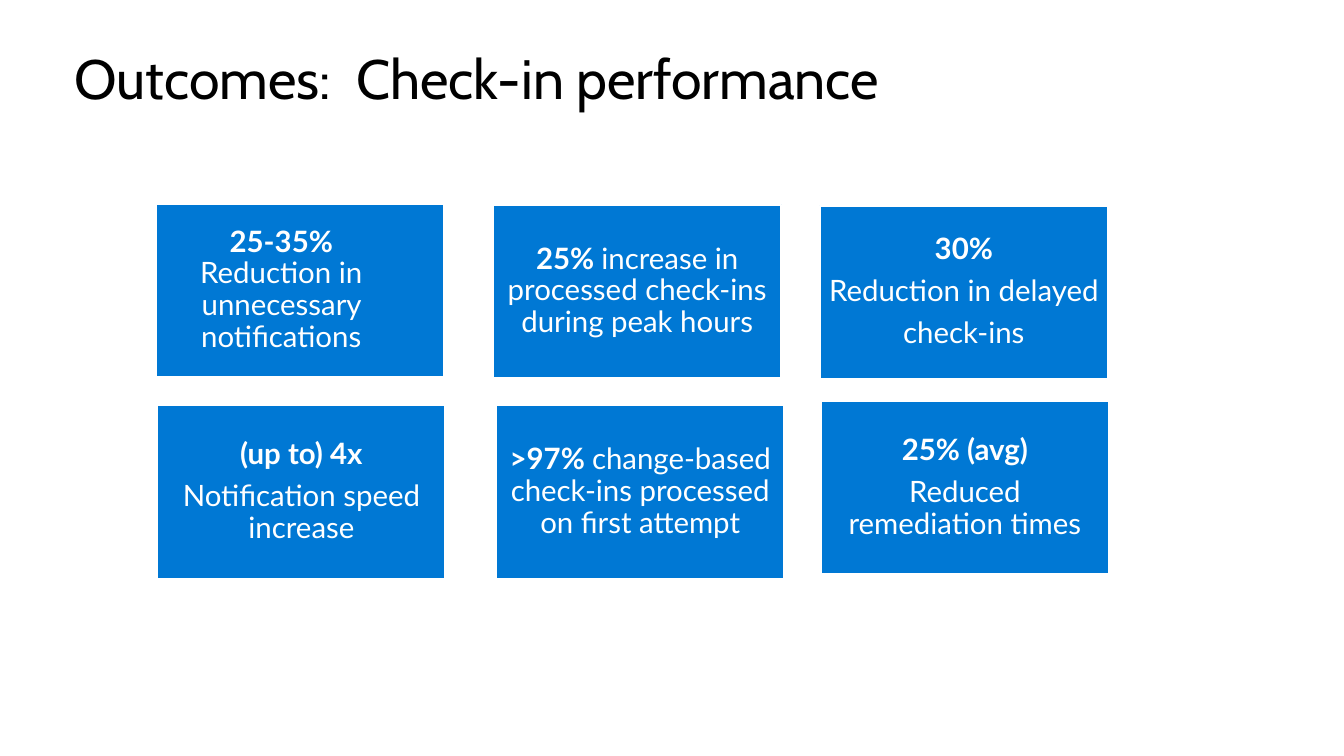
"""Build the check-in performance outcomes slide."""
from pptx import Presentation, util as u
from pptx.dml.color import RGBColor
from pptx.enum import shapes, text

HUES = {"tile": "0078D4", "light": "FFFFFF", "dark": "000000"}
WIDE, HIGH = 2.86, 1.72
PAD = u.Inches(0.08)


def write(para, words, size=21, font="Lato", hue="light", bold=False,
          align=text.PP_ALIGN.CENTER, after=7.35):
    para.alignment = align
    para.line_spacing = 0.9
    para.space_after = u.Pt(after)
    run = para.add_run()
    run.text = words
    run.font.size = u.Pt(size)
    run.font.name = font
    run.font.bold = bold
    run.font.color.rgb = RGBColor.from_string(HUES[hue])


deck = Presentation()
deck.slide_width, deck.slide_height = u.Inches(13.33), u.Inches(7.5)
slide = deck.slides.add_slide(deck.slide_layouts[5])

title = slide.shapes.title
title.left, title.top = u.Inches(0.64), u.Inches(0.5)
title.width, title.height = u.Inches(10.98), u.Inches(0.61)
frame = title.text_frame
frame.auto_size = text.MSO_AUTO_SIZE.NONE
frame.vertical_anchor = text.MSO_ANCHOR.MIDDLE
write(frame.paragraphs[0], "Outcomes:  Check-in performance", size=39.6,
      font="Cabin", hue="dark", align=text.PP_ALIGN.LEFT, after=0)

tiles = [
    (1.55, 2.02, [["25-35%"], ["", "Reduction in unnecessary notifications"]]),
    (1.56, 4.02, [["(up to) 4x"], ["", "Notification speed increase"]]),
    (8.13, 2.04, [["30%"], ["", "Reduction in delayed"], ["", "check-ins"]]),
    (8.14, 3.98, [["25% (avg)"], ["", "Reduced remediation times"]]),
    (4.92, 4.02, [[">97% ", "change-based check-ins processed on first attempt"]]),
    (4.89, 2.03, [["25% ", "increase in processed check-ins during peak hours"]]),
]

for left, top, lines in tiles:
    tile = slide.shapes.add_shape(
        shapes.MSO_SHAPE.RECTANGLE, u.Inches(left), u.Inches(top),
        u.Inches(WIDE), u.Inches(HIGH))
    tile.shadow.inherit = False
    tile.fill.solid()
    tile.fill.fore_color.rgb = RGBColor.from_string(HUES["tile"])
    tile.line.color.rgb = RGBColor.from_string(HUES["light"])
    tile.line.width = u.Pt(1.5)
    frame = tile.text_frame
    frame.word_wrap = True
    frame.vertical_anchor = text.MSO_ANCHOR.MIDDLE
    frame.margin_left = frame.margin_right = PAD
    frame.margin_top = frame.margin_bottom = PAD
    for row, parts in enumerate(lines):
        para = frame.add_paragraph() if row else frame.paragraphs[0]
        tight = parts == ["25-35%"]
        for spot, words in enumerate(parts):
            if words:
                write(para, words, bold=spot == 0, after=0 if tight else 7.35)
        if tight:
            para._p.get_or_add_pPr().set("marR", str(u.Inches(0.38)))

deck.save("out.pptx")
